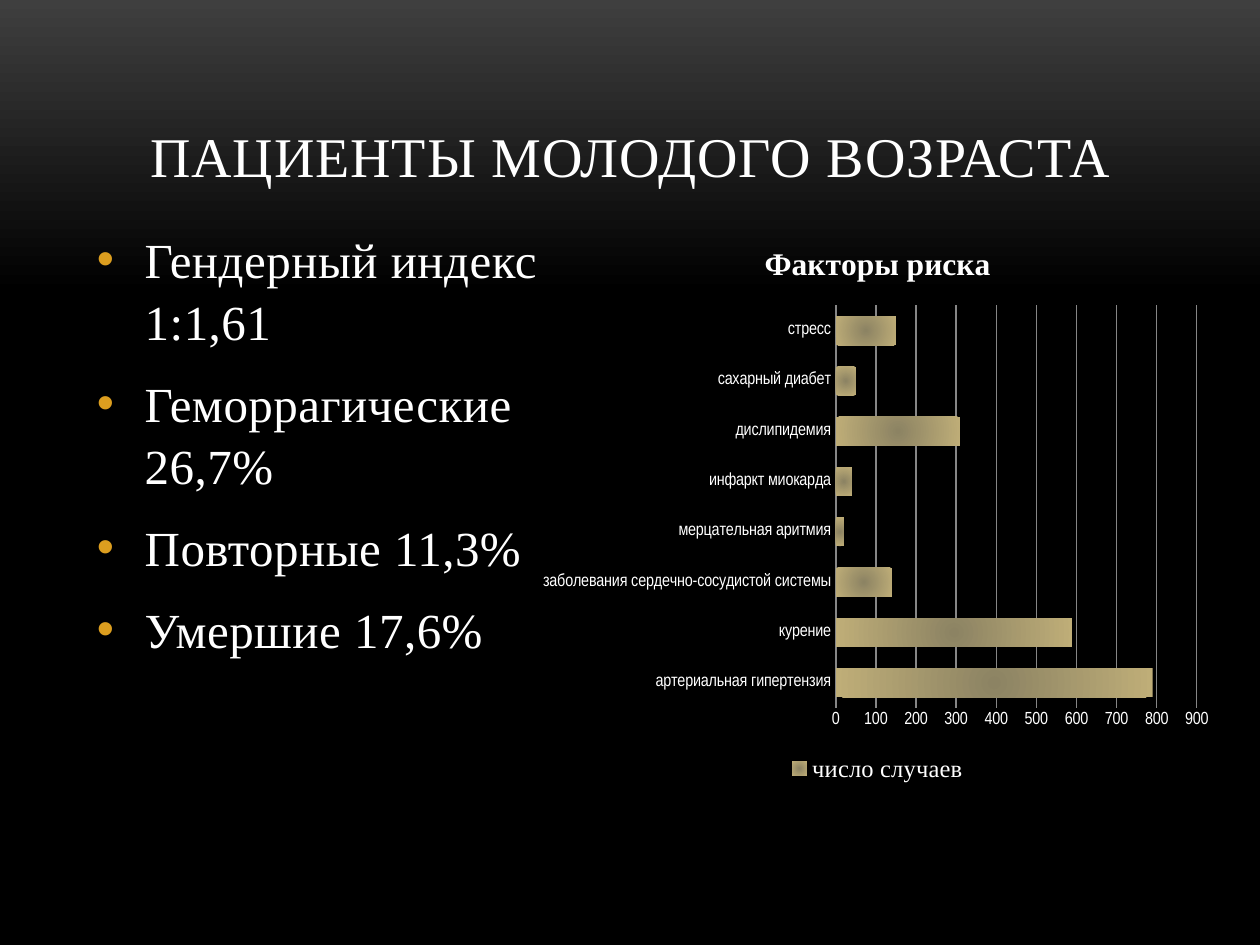
from lxml import etree
from pptx import Presentation
from pptx.chart.data import CategoryChartData
from pptx.dml.color import RGBColor
from pptx.enum.chart import XL_CHART_TYPE, XL_LEGEND_POSITION, XL_TICK_MARK
from pptx.enum.text import MSO_ANCHOR, PP_ALIGN
from pptx.oxml import parse_xml
from pptx.oxml.ns import nsdecls, qn
from pptx.util import Inches, Pt

BAR = XL_CHART_TYPE.BAR_CLUSTERED
BOTTOM_LEGEND = XL_LEGEND_POSITION.BOTTOM
NO_TICK = XL_TICK_MARK.NONE
BOTTOM = MSO_ANCHOR.BOTTOM
TOP = MSO_ANCHOR.TOP
CENTER = PP_ALIGN.CENTER

WHITE = RGBColor(0xFF, 0xFF, 0xFF)
BLACK = RGBColor(0, 0, 0)
CHARCOAL = RGBColor(0x3F, 0x3F, 0x3F)
GOLD = RGBColor(0xDC, 0x9E, 0x1F)
GRAY = RGBColor(0x86, 0x86, 0x86)
KHAKI = RGBColor(0x8C, 0x83, 0x63)
SAND = RGBColor(0xBF, 0xAE, 0x78)

SERIF = "Times New Roman"
NARROW = "Arial Narrow"

POINTS = ["Гендерный индекс 1:1,61", "Геморрагические 26,7%",
          "Повторные 11,3%", "Умершие 17,6%"]
RISK_FACTORS = {
    "артериальная гипертензия": 790,
    "курение": 590,
    "заболевания сердечно-сосудистой системы": 140,
    "мерцательная аритмия": 20,
    "инфаркт миокарда": 40,
    "дислипидемия": 310,
    "сахарный диабет": 50,
    "стресс": 150,
}


class Deck:
    def __init__(self, prs):
        self.s = prs.slides.add_slide(prs.slide_layouts[6])

    def background(self, top, base, end):
        fill = self.s.background.fill
        fill.gradient()
        fill.gradient_angle = 270
        for stop, color, position in zip(fill.gradient_stops, (top, base), (0, end)):
            stop.color.rgb = color
            stop.position = position

    def font(self, font, size, name=SERIF, bold=False):
        font.size = Pt(size)
        font.name = name
        font.bold = bold
        font.color.rgb = WHITE

    def text(self, box, lines, size, spacing, anchor=TOP):
        tf = self.s.shapes.add_textbox(*map(Inches, box)).text_frame
        tf.word_wrap = True
        tf.vertical_anchor = anchor
        tf.text = "\n".join(lines)
        for p in tf.paragraphs:
            for r in p.runs:
                self.font(r.font, size)
                r.font._element.set("spc", str(spacing))
        return tf

    def title(self, box, line):
        tf = self.text(box, [line], 32, 50, BOTTOM)
        tf.paragraphs[0].alignment = CENTER

    def bullets(self, box, lines):
        tf = self.text(box, lines, 28, 30)
        for i, p in enumerate(tf.paragraphs):
            pPr = p._p.get_or_add_pPr()
            pPr.set("marL", str(Inches(0.38)))
            pPr.set("indent", str(-Inches(0.38)))
            color = etree.SubElement(pPr, qn("a:buClr"))
            etree.SubElement(color, qn("a:srgbClr"), val=str(GOLD))
            etree.SubElement(pPr, qn("a:buFont"), typeface="Arial")
            etree.SubElement(pPr, qn("a:buChar"), char="•")
            p.line_spacing = 1.05
            p.space_before = Pt(5.6 if i else 0)
            p.space_after = Pt(6)

    def radial_fill(self, series, inner, outer):
        series.format.fill.gradient()
        grad = series.format.fill._xPr.find(qn("a:gradFill"))
        grad.getparent().replace(grad, parse_xml(
            f'<a:gradFill {nsdecls("a")} rotWithShape="1"><a:gsLst>'
            f'<a:gs pos="0"><a:srgbClr val="{inner}"/></a:gs>'
            f'<a:gs pos="100000"><a:srgbClr val="{outer}"/></a:gs></a:gsLst>'
            '<a:path path="circle"><a:fillToRect l="50000" t="50000" '
            'r="50000" b="50000"/></a:path></a:gradFill>'))

    def plot_area(self, chart, **area):
        plot_area = chart._chartSpace.chart.plotArea
        for old in plot_area.findall(qn("c:layout")):
            plot_area.remove(old)
        sizes = "".join(f'<c:{k} val="{v}"/>' for k, v in area.items())
        plot_area.insert(0, parse_xml(
            f'<c:layout {nsdecls("c")}><c:manualLayout>'
            '<c:layoutTarget val="inner"/><c:xMode val="edge"/>'
            f'<c:yMode val="edge"/>{sizes}</c:manualLayout></c:layout>'))

    def bar_chart(self, box, title, name, values):
        data = CategoryChartData()
        data.categories = list(values)
        data.add_series(name, list(values.values()))
        chart = self.s.shapes.add_chart(BAR, *map(Inches, box), data).chart
        self.font(chart.font, 10, NARROW)
        chart.has_title = True
        tf = chart.chart_title.text_frame
        tf.text = title
        self.font(tf.paragraphs[0].runs[0].font, 18, bold=True)
        chart.chart_title.include_in_layout = False
        chart.has_legend = True
        chart.legend.position = BOTTOM_LEGEND
        chart.legend.include_in_layout = False
        self.font(chart.legend.font, 14)
        plot = chart.plots[0]
        plot.gap_width = 75
        plot.overlap = -25
        plot.vary_by_categories = False
        self.radial_fill(plot.series[0], KHAKI, SAND)
        for axis in (chart.category_axis, chart.value_axis):
            axis.major_tick_mark = axis.minor_tick_mark = NO_TICK
        chart.category_axis.format.line.color.rgb = GRAY
        axis = chart.value_axis
        axis.minimum_scale, axis.maximum_scale, axis.major_unit = 0, 900, 100
        axis.format.line.fill.background()
        axis.major_gridlines.format.line.color.rgb = GRAY
        axis.major_gridlines.format.line.width = Pt(0.75)
        self.plot_area(chart, x=0.44, y=0.15, w=0.52, h=0.71)


def main():
    prs = Presentation()
    prs.slide_width, prs.slide_height = Inches(10), Inches(7.5)
    deck = Deck(prs)
    deck.background(CHARCOAL, BLACK, 0.31)
    deck.bullets((0.67, 1.75, 4.08, 4.5), POINTS)
    deck.title((0.67, 0.3, 8.67, 1.25), "ПАЦИЕНТЫ МОЛОДОГО ВОЗРАСТА")
    deck.bar_chart((4.21, 1.75, 5.51, 4.5), "Факторы риска", "число случаев", RISK_FACTORS)
    prs.save("out.pptx")


if __name__ == "__main__":
    main()
